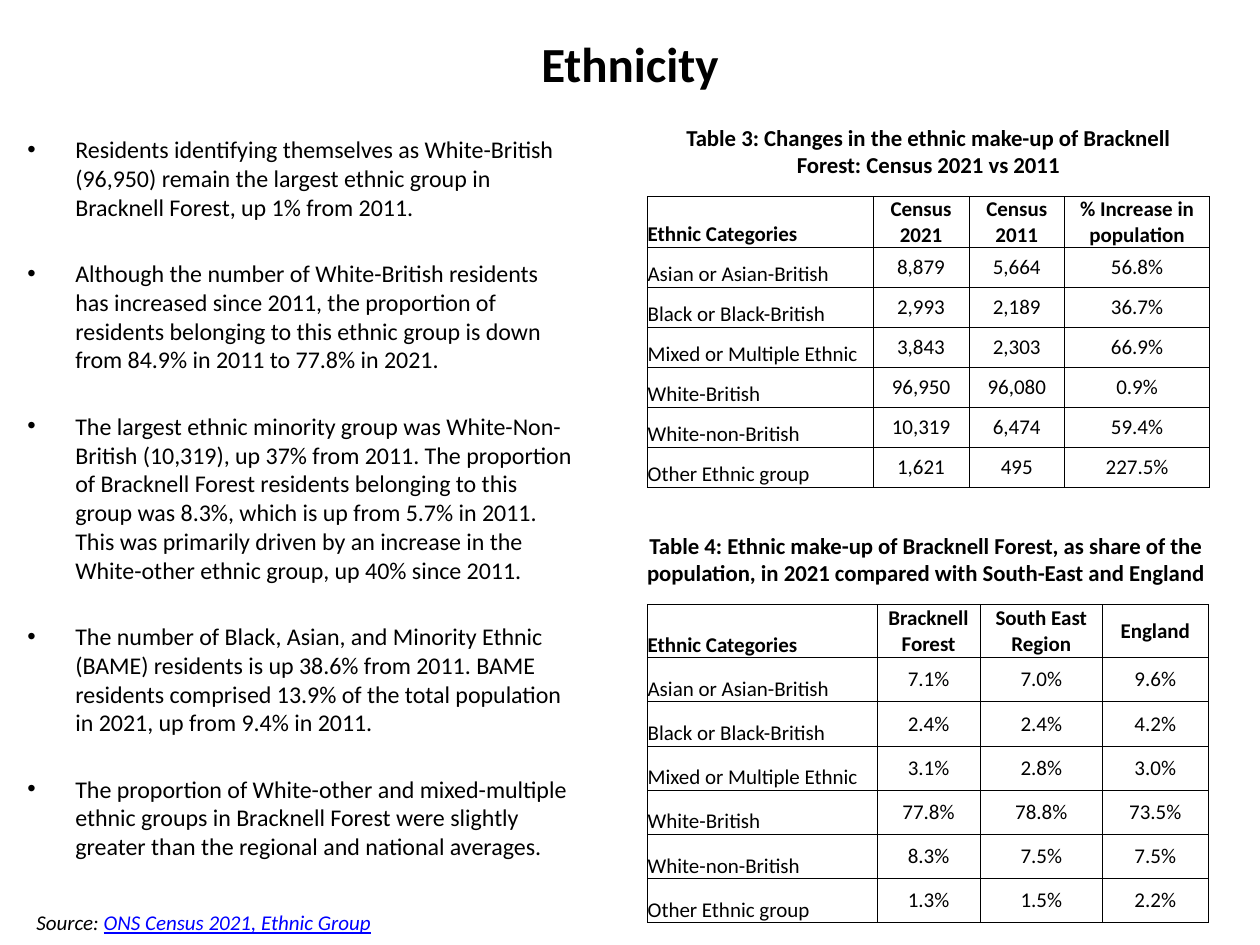
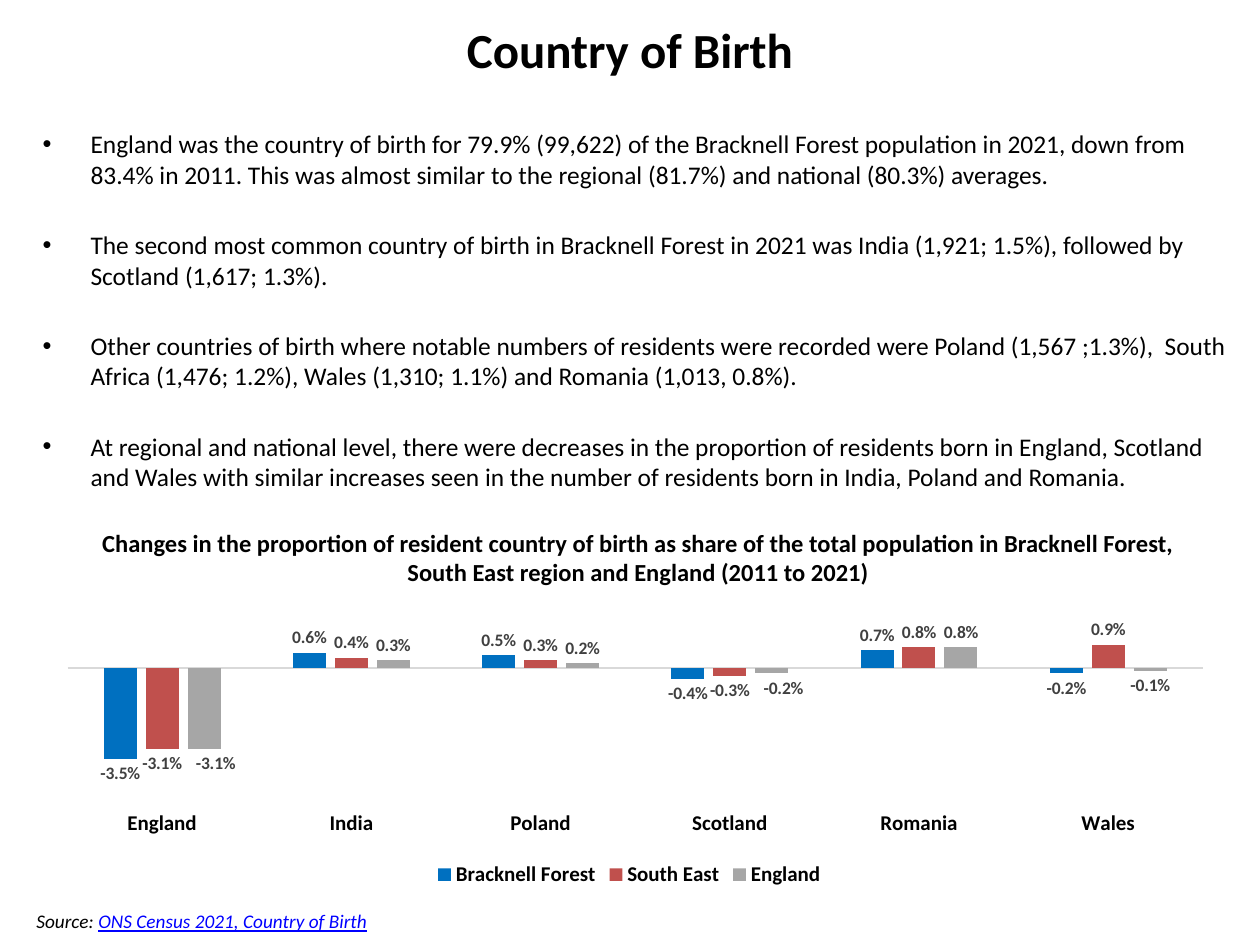
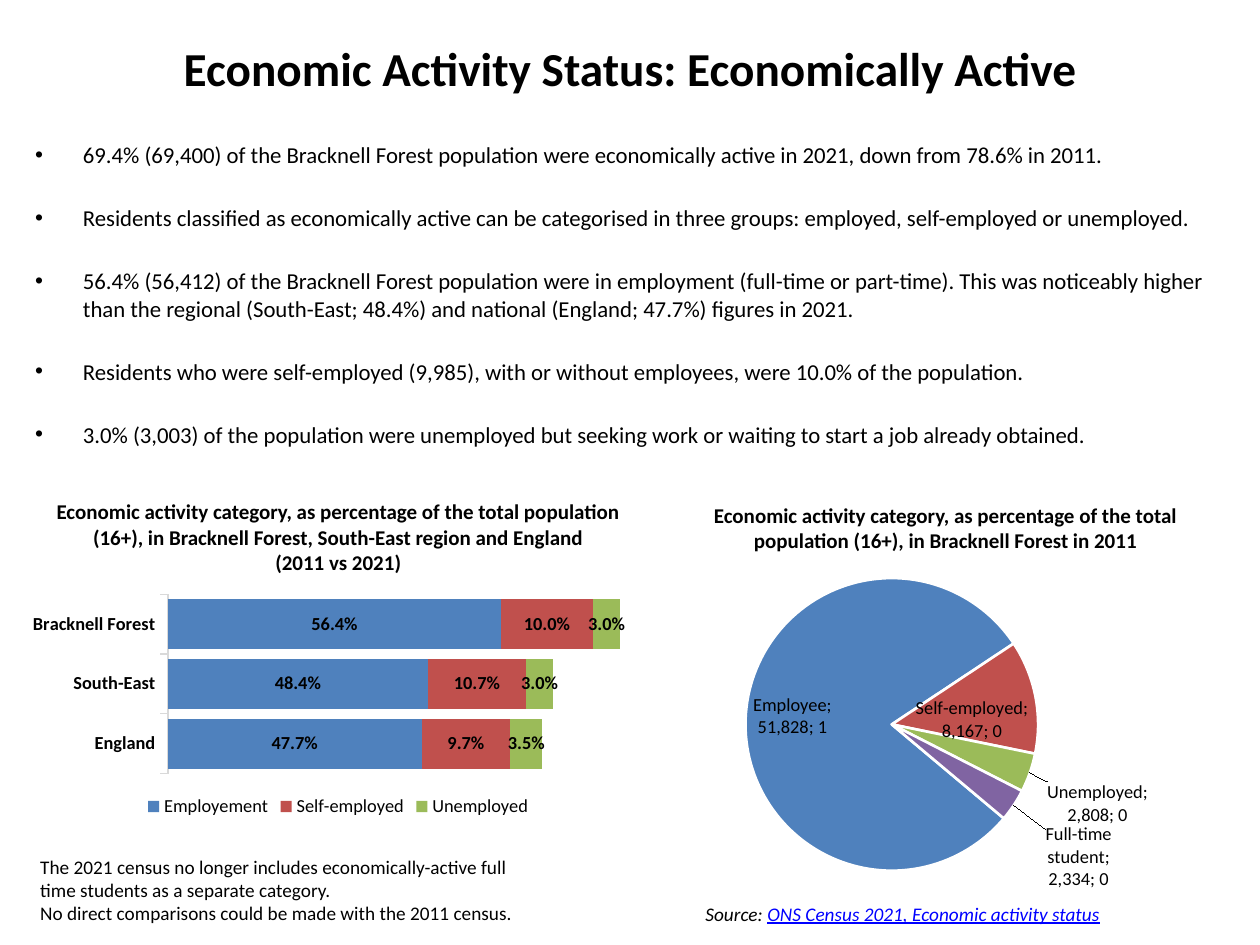
from copy import deepcopy
from dataclasses import dataclass, field
from typing import NamedTuple

from pptx import Presentation
from pptx.chart.data import CategoryChartData
from pptx.dml.color import RGBColor
from pptx.enum.chart import (XL_CHART_TYPE, XL_LABEL_POSITION, XL_LEGEND_POSITION,
                             XL_TICK_LABEL_POSITION, XL_TICK_MARK)
from pptx.enum.text import MSO_ANCHOR, PP_ALIGN
from pptx.oxml import parse_xml
from pptx.oxml.ns import nsdecls, qn
from pptx.util import Inches, Pt

WIDE, HIGH = Inches(10), Inches(7.5)
COL, ROW = WIDE // 100, HIGH // 75  # the slide is a grid of 100 by 75

FONT = "Calibri"
BLACK = RGBColor(0x00, 0x00, 0x00)
WHITE = RGBColor(0xFF, 0xFF, 0xFF)
LINK = RGBColor(0x00, 0x00, 0xFF)
DARK = RGBColor(0x40, 0x40, 0x40)
PALE = RGBColor(0xD9, 0xD9, 0xD9)
GREY = RGBColor(0xA6, 0xA6, 0xA6)
AZURE = RGBColor(0x00, 0x70, 0xC0)
BLUE = RGBColor(0x4F, 0x81, 0xBD)
RED = RGBColor(0xC0, 0x50, 0x4D)
GREEN = RGBColor(0x9B, 0xBB, 0x59)
PURPLE = RGBColor(0x80, 0x64, 0xA2)


class Spot(NamedTuple):
    """Left, top, width and height in grid columns and rows."""
    left: float
    top: float
    cols: float
    rows: float

    def place(self) -> tuple[int, int, int, int]:
        return (round(self.left * COL), round(self.top * ROW),
                round(self.cols * COL), round(self.rows * ROW))


class Look(NamedTuple):
    size: float
    bold: bool = False
    italic: bool = False
    color: RGBColor = BLACK


@dataclass
class Grid:
    spot: Spot
    cols: list[float]
    head: float
    step: float
    titles: list[str]
    data: list[list[str]]
    low: tuple[int, ...] = (0,)  # header columns that sit at the bottom


class Nudge(NamedTuple):
    """Moves one data label by shares of the chart's size."""
    series: int
    point: int
    right: float
    down: float


@dataclass
class Graph:
    spot: Spot
    kind: XL_CHART_TYPE
    names: list[str]
    series: dict[str, list[float]]
    colors: list[RGBColor]
    frame: Spot  # plot area as shares of the chart
    label: Look
    at: XL_LABEL_POSITION
    format: str = "0.0%"
    axis: Look = Look(12, True)
    key: Look = Look(12, True)
    span: tuple[float, float] = (0, 1)
    gap: int = 100
    lap: int = 0
    tick: XL_TICK_MARK = XL_TICK_MARK.NONE
    names_at: XL_TICK_LABEL_POSITION = XL_TICK_LABEL_POSITION.LOW
    nudges: list[Nudge] = field(default_factory=list)


def style(font, look: Look) -> None:
    font.name = FONT
    font.size = Pt(look.size)
    font.bold = look.bold
    font.italic = look.italic
    font.color.rgb = look.color


def write(slide, spot: Spot, text: str, look: Look,
          align=PP_ALIGN.LEFT, anchor=MSO_ANCHOR.TOP):
    frame = slide.shapes.add_textbox(*spot.place()).text_frame
    frame.word_wrap = True
    frame.vertical_anchor = anchor
    frame.text = text
    for para in frame.paragraphs:
        para.alignment = align
        for run in para.runs:
            style(run.font, look)
    return frame


def title(slide, spot: Spot, text: str, size: float = 28) -> None:
    write(slide, spot, text, Look(size, True), PP_ALIGN.CENTER, MSO_ANCHOR.MIDDLE)


def heading(slide, spot: Spot, text: str, size: float) -> None:
    write(slide, spot, text, Look(size, True), PP_ALIGN.CENTER)


def bullets(slide, spot: Spot, items: list[str], size: float) -> None:
    frame = write(slide, spot, "\n".join(items), Look(size))
    for rank, para in enumerate(frame.paragraphs):
        props = para._p.get_or_add_pPr()
        props.set("marL", str(Inches(0.38)))
        props.set("indent", str(-Inches(0.38)))
        props.append(parse_xml(f'<a:buFont {nsdecls("a")} typeface="Arial"/>'))
        props.append(parse_xml(f'<a:buChar {nsdecls("a")} char="•"/>'))
        if rank:
            para.space_before = Pt(round(1.57 * size, 1))


def source(slide, spot: Spot, text: str, size: float = 11) -> None:
    look = Look(size, italic=True)
    frame = write(slide, spot, "Source: ", look)
    run = frame.paragraphs[0].add_run()
    run.text = text
    style(run.font, look._replace(color=LINK))
    run.font.underline = True


def border(cell) -> None:
    props = cell._tc.get_or_add_tcPr()
    for side in ("lnL", "lnR", "lnT", "lnB"):
        props.append(parse_xml(
            f'<a:{side} {nsdecls("a")} w="{Pt(0.5)}"><a:solidFill>'
            f'<a:srgbClr val="{BLACK}"/></a:solidFill></a:{side}>'))


def draw_grid(slide, grid: Grid) -> None:
    lines = [grid.titles, *grid.data]
    table = slide.shapes.add_table(len(lines), len(grid.cols), *grid.spot.place()).table
    table.first_row = table.horz_banding = False
    for col, width in zip(table.columns, grid.cols):
        col.width = round(width * COL)
    for r, line in enumerate(lines):
        table.rows[r].height = round((grid.step if r else grid.head) * ROW)
        for c, text in enumerate(line):
            cell = table.cell(r, c)
            border(cell)
            cell.fill.background()
            cell.margin_left = cell.margin_right = 0
            cell.margin_top = cell.margin_bottom = 0
            low = c == 0 or (r == 0 and c in grid.low)
            cell.vertical_anchor = MSO_ANCHOR.BOTTOM if low else MSO_ANCHOR.MIDDLE
            cell.text = text
            para = cell.text_frame.paragraphs[0]
            para.alignment = PP_ALIGN.CENTER if c else PP_ALIGN.LEFT
            style(para.runs[0].font, Look(12, r == 0))


def layout(body: str):
    return parse_xml(f'<c:layout {nsdecls("c")}><c:manualLayout>{body}'
                     '</c:manualLayout></c:layout>')


def set_frame(chart, frame: Spot) -> None:
    area = chart._chartSpace.chart.plotArea
    for old in area.findall(qn("c:layout")):
        area.remove(old)
    sizes = "".join(f'<c:{tag} val="{share}"/>' for tag, share in zip("xywh", frame))
    area.insert(0, layout('<c:layoutTarget val="inner"/><c:xMode val="edge"/>'
                          f'<c:yMode val="edge"/>{sizes}'))


def nudge(labels, move: Nudge, place: str = "outEnd") -> None:
    """Give one point its own label, shifted from its usual place."""
    root = labels._element
    item = parse_xml(f'<c:dLbl {nsdecls("c")}><c:idx val="{move.point}"/></c:dLbl>')
    item.append(layout(f'<c:x val="{move.right}"/><c:y val="{move.down}"/>'))
    for part in root:
        if part.tag not in (qn("c:dLbl"), qn("c:showLeaderLines")):
            item.append(deepcopy(part))
    item.find(qn("c:dLblPos")).set("val", place)
    root.insert(len(root.findall(qn("c:dLbl"))), item)


def set_axes(chart, graph: Graph) -> None:
    names, scale = chart.category_axis, chart.value_axis
    names.major_tick_mark = graph.tick
    names.minor_tick_mark = XL_TICK_MARK.NONE
    names.tick_label_position = graph.names_at
    names.has_major_gridlines = False
    names.format.line.color.rgb = PALE
    names.format.line.width = Pt(0.75)
    style(names.tick_labels.font, graph.axis)
    scale.visible = scale.has_major_gridlines = False
    scale.minimum_scale, scale.maximum_scale = graph.span
    plot = chart.plots[0]
    plot.gap_width, plot.overlap = graph.gap, graph.lap
    chart.has_legend = True
    chart.legend.position = XL_LEGEND_POSITION.BOTTOM
    chart.legend.include_in_layout = False
    style(chart.legend.font, graph.key)


def set_pie(plot, graph: Graph, angle: int) -> None:
    root = plot._element
    for old in root.findall(qn("c:firstSliceAng")):
        root.remove(old)
    root.append(parse_xml(f'<c:firstSliceAng {nsdecls("c")} val="{angle}"/>'))
    series = plot.series[0]
    for rank, color in enumerate(graph.colors):
        shape = series.points[rank].format
        shape.fill.solid()
        shape.fill.fore_color.rgb = color
        shape.line.color.rgb = WHITE
        shape.line.width = Pt(1.5)
    labels = series.data_labels
    labels.show_category_name = labels.show_percentage = True
    labels._element.find(qn("c:showBubbleSize")).addnext(
        parse_xml(f'<c:separator {nsdecls("c")}>; </c:separator>'))


def draw_graph(slide, graph: Graph) -> None:
    data = CategoryChartData(number_format=graph.format)
    data.categories = graph.names
    for name, values in graph.series.items():
        data.add_series(name, values)
    chart = slide.shapes.add_chart(graph.kind, *graph.spot.place(), data).chart
    chart.has_title = chart.has_legend = False
    style(chart.font, Look(10))
    set_frame(chart, graph.frame)
    plot = chart.plots[0]
    pie = graph.kind == XL_CHART_TYPE.PIE
    plot.vary_by_categories = pie
    for series, color in zip(plot.series, graph.colors):
        labels = series.data_labels
        labels.show_value = True
        labels.number_format = graph.format
        labels.number_format_is_linked = False
        labels.position = graph.at
        style(labels.font, graph.label)
        if not pie:
            series.invert_if_negative = False
            series.format.fill.solid()
            series.format.fill.fore_color.rgb = color
    if pie:
        set_pie(plot, graph, 130)
    else:
        set_axes(chart, graph)
    for move in graph.nudges:
        nudge(plot.series[move.series].data_labels, move)


GROUPS = ["Asian or Asian-British", "Black or Black-British", "Mixed or Multiple Ethnic",
          "White-British", "White-non-British", "Other Ethnic group"]


def by_group(*lines: str) -> list[list[str]]:
    return [[group, *line.split()] for group, line in zip(GROUPS, lines)]


def ethnic(slide) -> None:
    title(slide, Spot(5, 2.5, 90, 5), "Ethnicity")
    bullets(slide, Spot(1.2, 10.2, 45.6, 61.8), [
        "Residents identifying themselves as White-British (96,950) remain the largest ethnic group in Bracknell Forest, up 1% from 2011.",
        "Although the number of White-British residents has increased since 2011, the proportion of residents belonging to this ethnic group is down from 84.9% in 2011 to 77.8% in 2021.",
        "The largest ethnic minority group was White-Non-British (10,319), up 37% from 2011. The proportion of Bracknell Forest residents belonging to this group was 8.3%, which is up from 5.7% in 2011. This was primarily driven by an increase in the White-other ethnic group, up 40% since 2011.",
        "The number of Black, Asian, and Minority Ethnic (BAME) residents is up 38.6% from 2011. BAME residents comprised 13.9% of the total population in 2021, up from 9.4% in 2011.",
        "The proportion of White-other and mixed-multiple ethnic groups in Bracknell Forest were slightly greater than the regional and national averages.",
    ], 13.7)
    heading(slide, Spot(51.4, 9.3, 44.5, 5.6),
            "Table 3: Changes in the ethnic make-up of Bracknell Forest: Census 2021 vs 2011", 13)
    draw_grid(slide, Grid(
        Spot(51.4, 15.6, 44.5, 23.1), [17.9, 7.6, 7.6, 11.5], 4, 3.18,
        ["Ethnic Categories", "Census 2021", "Census 2011", "% Increase in population"],
        by_group("8,879 5,664 56.8%", "2,993 2,189 36.7%", "3,843 2,303 66.9%",
                 "96,950 96,080 0.9%", "10,319 6,474 59.4%", "1,621 495 227.5%"),
        low=(0, 1, 3)))
    heading(slide, Spot(50, 41.7, 46.9, 5.4),
            "Table 4: Ethnic make-up of Bracknell Forest, as share of the population, in 2021 compared with South-East and England", 13)
    draw_grid(slide, Grid(
        Spot(51.4, 48, 44.5, 25.3), [18.2, 8.2, 9.7, 8.4], 4.2, 3.51,
        ["Ethnic Categories", "Bracknell Forest", "South East Region", "England"],
        by_group("7.1% 7.0% 9.6%", "2.4% 2.4% 4.2%", "3.1% 2.8% 3.0%",
                 "77.8% 78.8% 73.5%", "8.3% 7.5% 7.5%", "1.3% 1.5% 2.2%")))
    source(slide, Spot(1.9, 71.7, 48.5, 3), "ONS Census 2021, Ethnic Group", 12)


def birth(slide) -> None:
    title(slide, Spot(5, 1.6, 90, 4.5), "Country of Birth")
    bullets(slide, Spot(2.4, 9.7, 96.5, 30), [
        "England was the country of birth for 79.9% (99,622) of the Bracknell Forest population in 2021, down from 83.4% in 2011. This was almost similar to the regional (81.7%) and national (80.3%) averages.",
        "The second most common country of birth in Bracknell Forest in 2021 was India (1,921; 1.5%), followed by Scotland (1,617; 1.3%).",
        "Other countries of birth where notable numbers of residents were recorded were Poland (1,567 ;1.3%),  South Africa (1,476; 1.2%), Wales (1,310; 1.1%) and Romania (1,013, 0.8%).",
        "At regional and national level, there were decreases in the proportion of residents born in England, Scotland and Wales with similar increases seen in the number of residents born in India, Poland and Romania.",
    ], 14.5)
    heading(slide, Spot(5.9, 41.4, 89.5, 5.7),
            "Changes in the proportion of resident country of birth as share of the total population in Bracknell Forest, South East region and England (2011 to 2021)", 14)
    draw_graph(slide, Graph(
        Spot(3.5, 48.9, 92.9, 21.9), XL_CHART_TYPE.COLUMN_CLUSTERED,
        ["England", "India", "Poland", "Scotland", "Romania", "Wales"],
        {"Bracknell Forest": [-0.035, 0.006, 0.005, -0.004, 0.007, -0.002],
         "South East": [-0.031, 0.004, 0.003, -0.003, 0.008, 0.009],
         "England": [-0.031, 0.003, 0.002, -0.002, 0.008, -0.001]},
        [AZURE, RED, GREY], Spot(0.02, 0, 0.97, 0.66),
        Look(10, True, color=DARK), XL_LABEL_POSITION.OUTSIDE_END,
        span=(-0.05, 0.02), gap=219, lap=-27,
        nudges=[Nudge(2, 0, 0.01, 0), Nudge(2, 3, 0.01, 0)]))
    source(slide, Spot(1.9, 71.7, 48.5, 2.9), "ONS Census 2021, Country of Birth")


def work(slide) -> None:
    title(slide, Spot(5, 3, 90, 4.8), "Economic Activity Status: Economically Active", 27)
    bullets(slide, Spot(1.8, 10.7, 96.1, 26.8), [
        "69.4% (69,400) of the Bracknell Forest population were economically active in 2021, down from 78.6% in 2011.",
        "Residents classified as economically active can be categorised in three groups: employed, self-employed or unemployed.",
        "56.4% (56,412) of the Bracknell Forest population were in employment (full-time or part-time). This was noticeably higher than the regional (South-East; 48.4%) and national (England; 47.7%) figures in 2021.",
        "Residents who were self-employed (9,985), with or without employees, were 10.0% of the population.",
        "3.0% (3,003) of the population were unemployed but seeking work or waiting to start a job already obtained.",
    ], 13)
    heading(slide, Spot(2.1, 39.1, 49.5, 7.1),
            "Economic activity category, as percentage of the total population (16+), in Bracknell Forest, South-East region and England\n(2011 vs 2021)", 12)
    draw_graph(slide, Graph(
        Spot(1.8, 46.8, 50.1, 18.5), XL_CHART_TYPE.BAR_STACKED,
        ["England", "South-East", "Bracknell Forest"],
        {"Employement": [0.477, 0.484, 0.564],
         "Self-employed": [0.097, 0.107, 0.1],
         "Unemployed": [0.035, 0.03, 0.03]},
        [BLUE, RED, GREEN], Spot(0.23, 0.02, 0.74, 0.77),
        Look(10.5, True), XL_LABEL_POSITION.CENTER,
        axis=Look(10.5, True), key=Look(10.5), span=(0.2, 0.71), gap=20, lap=100,
        tick=XL_TICK_MARK.OUTSIDE, names_at=XL_TICK_LABEL_POSITION.NEXT_TO_AXIS))
    heading(slide, Spot(51.9, 39.4, 46.3, 5),
            "Economic activity category, as percentage of the total population (16+), in Bracknell Forest in 2011", 12)
    draw_graph(slide, Graph(
        Spot(54.3, 44.3, 40.7, 26.4), XL_CHART_TYPE.PIE,
        ["Employee", "Self-employed", "Unemployed", "Full-time student"],
        {"Series 1": [51828, 8167, 2808, 2334]},
        [BLUE, RED, GREEN, PURPLE], Spot(0.01, 0.06, 0.79, 0.88),
        Look(10.5), XL_LABEL_POSITION.INSIDE_END, "#,##0",
        nudges=[Nudge(0, 2, 0.02, 0.02), Nudge(0, 3, 0.05, 0.06)]))
    write(slide, Spot(2.2, 67.4, 42.2, 6.6),
          "The 2021 census no longer includes economically-active full time students as a separate category.\nNo direct comparisons could be made with the 2011 census.", Look(11))
    source(slide, Spot(55, 71.1, 40.9, 2.9), "ONS Census 2021, Economic activity status")


def main() -> None:
    deck = Presentation()
    deck.slide_width, deck.slide_height = WIDE, HIGH
    for build in (ethnic, birth, work):
        build(deck.slides.add_slide(deck.slide_layouts[6]))
    deck.save("out.pptx")


if __name__ == "__main__":
    main()
